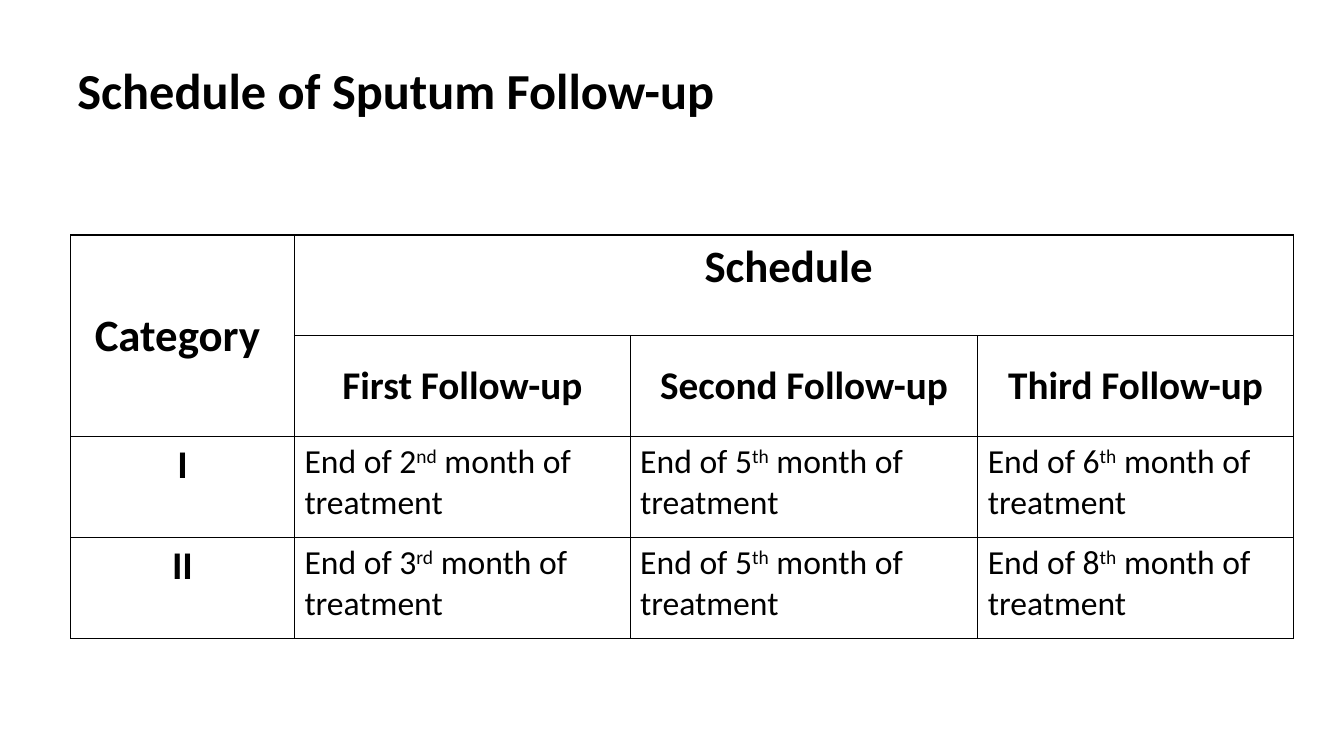
from lxml.etree import SubElement
from pptx import Presentation
from pptx.dml.color import RGBColor
from pptx.enum.text import MSO_ANCHOR as Anchor, PP_ALIGN as Align
from pptx.oxml.ns import qn
from pptx.util import Cm, Pt

TITLE = "Schedule of Sputum Follow-up"
HEADS = ["First Follow-up", "Second Follow-up", "Third Follow-up"]
PLANS = [
    ("I", [("2", "nd"), ("5", "th"), ("6", "th")]),
    ("II", [("3", "rd"), ("5", "th"), ("8", "th")]),
]
WIDTHS = [5.64, 8.46, 8.76, 7.95]
HEIGHT = 2.54
INK, PAPER = "000000", "FFFFFF"


def color(fmt, code):
    fmt.rgb = RGBColor.from_string(code)


def write(frame, *parts, size=24, bold=False, align=Align.LEFT, anchor=Anchor.TOP):
    frame.word_wrap = True
    frame.vertical_anchor = anchor
    para = frame.paragraphs[0]
    para.alignment = align
    for index, part in enumerate(parts):
        run = para.add_run()
        run.text = part
        run.font.name = "Calibri"
        run.font.size = Pt(size)
        run.font.bold = bold
        color(run.font.color, INK)
        if index % 2:
            run.font._element.set("baseline", "30000")


def border(cell):
    cell.fill.solid()
    color(cell.fill.fore_color, PAPER)
    props = cell._tc.get_or_add_tcPr()
    for index, side in enumerate("LRTB"):
        line = SubElement(props, qn("a:ln" + side), w=str(Pt(1)))
        fill = SubElement(line, qn("a:solidFill"))
        SubElement(fill, qn("a:srgbClr"), val=INK)
        props.insert(index, line)


def label(cell, text, size=28, anchor=Anchor.MIDDLE):
    write(cell.text_frame, text, size=size, bold=True, align=Align.CENTER)
    cell.vertical_anchor = anchor


deck = Presentation()
deck.slide_width, deck.slide_height = Cm(33.87), Cm(19.05)
slide = deck.slides.add_slide(deck.slide_layouts[6])

title = slide.shapes.add_textbox(Cm(1.7), Cm(1.47), Cm(30.48), Cm(1.57))
write(title.text_frame, TITLE, size=36, bold=True, anchor=Anchor.MIDDLE)

count = len(PLANS) + 2
frame = slide.shapes.add_table(
    count, len(WIDTHS), Cm(1.78), Cm(5.92), Cm(sum(WIDTHS)), Cm(HEIGHT * count)
)
table = frame.table
for col, width in zip(table.columns, WIDTHS):
    col.width = Cm(width)
for row in table.rows:
    row.height = Cm(HEIGHT)
    for cell in row.cells:
        border(cell)

table.cell(0, 0).merge(table.cell(1, 0))
table.cell(0, 1).merge(table.cell(0, 3))
label(table.cell(0, 0), "Category ", size=32)
label(table.cell(0, 1), "Schedule ", size=32, anchor=Anchor.TOP)
for col, head in enumerate(HEADS, 1):
    label(table.cell(1, col), head)

for row, (name, months) in enumerate(PLANS, 2):
    label(table.cell(row, 0), name, anchor=Anchor.TOP)
    for col, (month, suffix) in enumerate(months, 1):
        text = table.cell(row, col).text_frame
        write(text, "End of " + month, suffix, " month of treatment")

deck.save("out.pptx")
